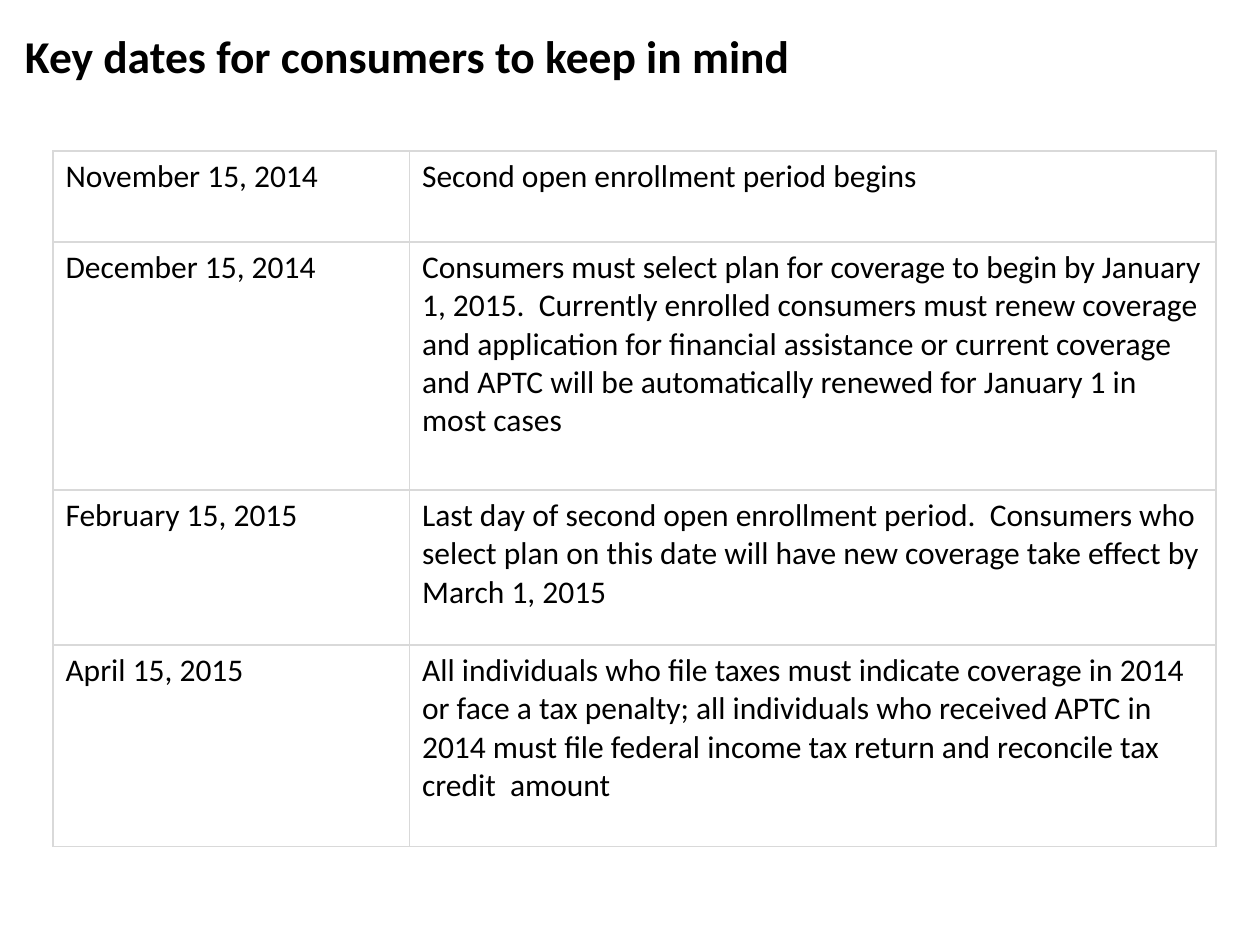
from lxml.etree import SubElement
from pptx import Presentation
from pptx.dml.color import RGBColor
from pptx.enum.text import MSO_ANCHOR
from pptx.oxml.ns import qn
from pptx.util import Inches, Pt

COLUMN_WIDTHS = [2.83, 6.4]
ROW_HEIGHTS = [0.72, 1.97, 1.23, 1.6]
KEY_DATES = [
    ("November 15, 2014", "Second open enrollment period begins"),
    ("December 15, 2014",
     "Consumers must select plan for coverage to begin by January 1, 2015.  "
     "Currently enrolled consumers must renew coverage and application for "
     "financial assistance or current coverage and APTC will be automatically "
     "renewed for January 1 in most cases"),
    ("February 15, 2015",
     "Last day of second open enrollment period.  Consumers who select plan on "
     "this date will have new coverage take effect by March 1, 2015"),
    ("April 15, 2015",
     "All individuals who file taxes must indicate coverage in 2014 or face a "
     "tax penalty; all individuals who received APTC in 2014 must file federal "
     "income tax return and reconcile tax credit  amount"),
]


def color(value):
    """Turn a hex string into a colour."""
    return RGBColor.from_string(value)


def write_text(frame, text, size=18, bold=False, fill="000000"):
    """Write one formatted paragraph into a text frame."""
    frame.word_wrap = True
    span = frame.paragraphs[0].add_run()
    span.text = text
    span.font.name = "Calibri"
    span.font.size = Pt(size)
    span.font.bold = bold
    span.font.color.rgb = color(fill)


def add_title(page, text):
    """Add the slide heading."""
    box = page.shapes.add_textbox(Inches(0.1), Inches(0.17), Inches(9.8), Inches(1))
    box.text_frame.vertical_anchor = MSO_ANCHOR.TOP
    write_text(box.text_frame, text, size=26, bold=True)


def style_cell(cell, border="D9D9D9", width=1):
    """Give a cell thin borders on all sides and a white fill."""
    properties = cell._tc.get_or_add_tcPr()
    for side in ("a:lnL", "a:lnR", "a:lnT", "a:lnB"):
        line = SubElement(properties, qn(side), w=str(Pt(width)))
        solid = SubElement(line, qn("a:solidFill"))
        SubElement(solid, qn("a:srgbClr"), val=border)
    cell.fill.solid()
    cell.fill.fore_color.rgb = color("FFFFFF")


def add_dates_table(page):
    """Add the table of dates and what happens on them."""
    table = page.shapes.add_table(
        len(ROW_HEIGHTS), len(COLUMN_WIDTHS), Inches(0.42), Inches(1.2),
        Inches(sum(COLUMN_WIDTHS)), Inches(sum(ROW_HEIGHTS))).table
    table.first_row = False
    table.horz_banding = False
    for column, width in zip(table.columns, COLUMN_WIDTHS):
        column.width = Inches(width)
    for row, height, texts in zip(table.rows, ROW_HEIGHTS, KEY_DATES):
        row.height = Inches(height)
        for cell, text in zip(row.cells, texts):
            write_text(cell.text_frame, text)
            style_cell(cell)


def main():
    """Build and save the slide."""
    deck = Presentation()
    deck.slide_width = Inches(10)
    deck.slide_height = Inches(7.5)
    page = deck.slides.add_slide(deck.slide_layouts[6])
    add_dates_table(page)
    add_title(page, "Key dates for consumers to keep in mind")
    deck.save("out.pptx")


if __name__ == "__main__":
    main()
